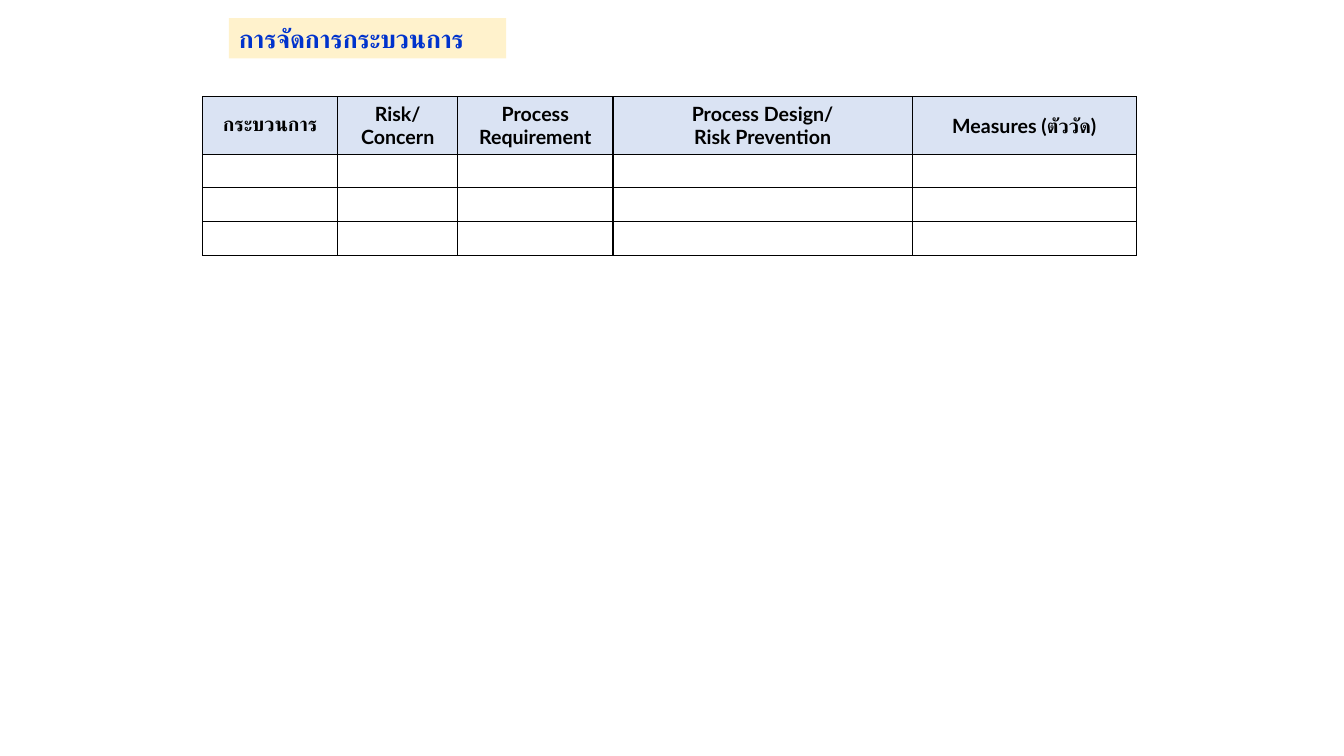
"""Build a process management slide with an empty planning table."""
from lxml import etree
from pptx import Presentation
from pptx.dml.color import RGBColor
from pptx.enum.text import MSO_ANCHOR, MSO_AUTO_SIZE, PP_ALIGN
from pptx.oxml.ns import qn
from pptx.util import Inches, Pt

CENTER = PP_ALIGN.CENTER
MIDDLE = MSO_ANCHOR.MIDDLE
GROW = MSO_AUTO_SIZE.SHAPE_TO_FIT_TEXT

HEADINGS = ["กระบวนการ", "Risk/\nConcern", "Process Requirement",
            "Process Design/\nRisk Prevention", "Measures (ตัววัด)"]
COLUMN_WIDTHS = [1.34, 1.19, 1.54, 2.97, 2.22]
ROW_HEIGHTS = [0.57, 0.33, 0.33, 0.33]


def style_font(font, size, color):
    font.name = "Lato"
    font.size = Pt(size)
    font.bold = True
    font.color.rgb = RGBColor.from_string(color)


def add_borders(cell, color):
    properties = cell._tc.get_or_add_tcPr()
    for side in ("a:lnL", "a:lnR", "a:lnT", "a:lnB"):
        border = etree.SubElement(properties, qn(side), w=str(Pt(1)))
        fill = etree.SubElement(border, qn("a:solidFill"))
        etree.SubElement(fill, qn("a:srgbClr"), val=color)


prs = Presentation()
prs.slide_width = Inches(13.33)
prs.slide_height = Inches(7.5)
slide = prs.slides.add_slide(prs.slide_layouts[6])

title = slide.shapes.add_textbox(Inches(2.27), Inches(0.18), Inches(2.75), Inches(0.4))
title.fill.solid()
title.fill.fore_color.rgb = RGBColor.from_string("FFF2CC")
title.text_frame.word_wrap = False
title.text_frame.auto_size = GROW
title.text_frame.text = "การจัดการกระบวนการ"
style_font(title.text_frame.paragraphs[0].font, 18, "0033CC")

process_table = slide.shapes.add_table(
    len(ROW_HEIGHTS), len(COLUMN_WIDTHS), Inches(2.01), Inches(0.96),
    Inches(sum(COLUMN_WIDTHS)), Inches(sum(ROW_HEIGHTS))).table
process_table.first_row = False
process_table.horz_banding = False
for column, width in zip(process_table.columns, COLUMN_WIDTHS):
    column.width = Inches(width)
for row, height in zip(process_table.rows, ROW_HEIGHTS):
    row.height = Inches(height)

for cell in process_table.iter_cells():
    add_borders(cell, "000000")
    cell.fill.background()

for cell, heading in zip(process_table.rows[0].cells, HEADINGS):
    cell.fill.solid()
    cell.fill.fore_color.rgb = RGBColor.from_string("DAE3F3")
    cell.vertical_anchor = MIDDLE
    cell.text = heading
    for paragraph in cell.text_frame.paragraphs:
        paragraph.alignment = CENTER
        style_font(paragraph.font, 14, "000000")

for row in list(process_table.rows)[1:]:
    for cell in row.cells:
        blank_line = cell.text_frame.paragraphs[0]._p
        etree.SubElement(blank_line, qn("a:endParaRPr"), sz="1400")

prs.save("out.pptx")
